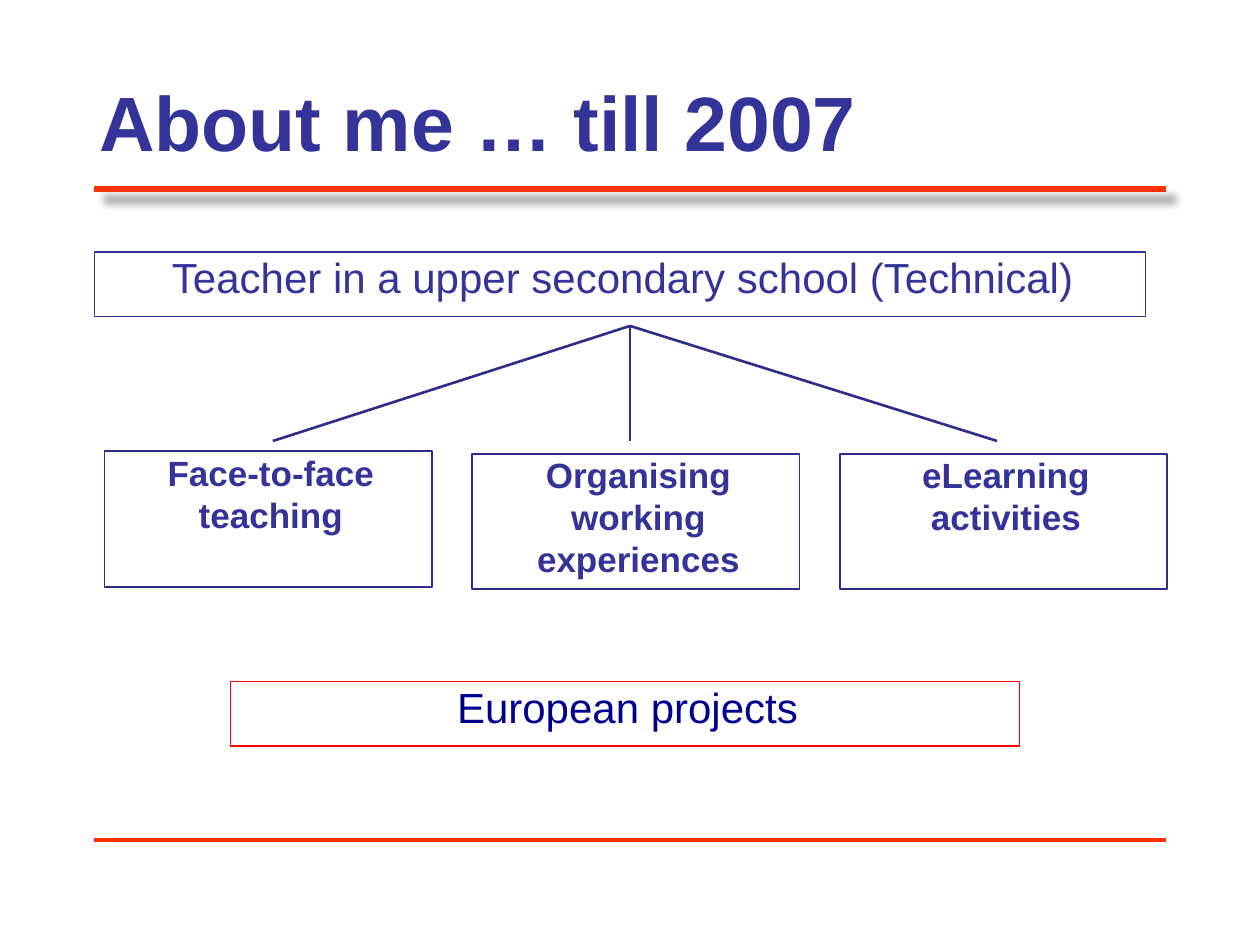
from lxml import etree
from pptx import Presentation
from pptx.dml.color import RGBColor
from pptx.enum.shapes import MSO_CONNECTOR, MSO_SHAPE
from pptx.enum.text import MSO_ANCHOR, PP_ALIGN
from pptx.oxml import parse_xml
from pptx.oxml.ns import nsdecls, qn
from pptx.util import Cm, Pt

STRAIGHT = MSO_CONNECTOR.STRAIGHT
RECTANGLE = MSO_SHAPE.RECTANGLE
TOP, MIDDLE = MSO_ANCHOR.TOP, MSO_ANCHOR.MIDDLE
LEFT, CENTER = PP_ALIGN.LEFT, PP_ALIGN.CENTER

INDIGO = RGBColor(0x33, 0x33, 0x99)
DARK_INDIGO = RGBColor(0x2D, 0x2D, 0x8A)
NAVY = RGBColor(0x00, 0x00, 0x90)
ORANGE = RGBColor(0xFF, 0x33, 0x00)
RED = RGBColor(0xFF, 0x00, 0x00)

RULE_SHADOW = (
    f'<a:effectLst {nsdecls("a")}>'
    '<a:outerShdw blurRad="63500" dist="101600" dir="2700000">'
    '<a:srgbClr val="808080"/></a:outerShdw></a:effectLst>'
)


class SlideBuilder:
    """Draws the elements of one slide in a shared style."""

    font_name = "Arial"

    def __init__(self, slide):
        self.slide = slide

    def set_text(self, shape, text, size, color, bold, alignment, anchor):
        frame = shape.text_frame
        frame.word_wrap = True
        frame.vertical_anchor = anchor
        frame.margin_left = Cm(0.1)
        frame.margin_right = frame.margin_top = frame.margin_bottom = 0
        paragraph = frame.paragraphs[0]
        paragraph.text = text
        paragraph.alignment = alignment
        font = paragraph.font
        font.name, font.size, font.bold = self.font_name, Pt(size), bold
        font.color.rgb = color

    def title(self, text, left, top, width, height):
        shape = self.slide.shapes.add_textbox(Cm(left), Cm(top), Cm(width), Cm(height))
        self.set_text(shape, text, 44, INDIGO, True, LEFT, MIDDLE)

    def box(self, text, left, top, width, height, border, border_width,
            size=24, color=INDIGO, bold=False):
        shape = self.slide.shapes.add_shape(
            RECTANGLE, Cm(left), Cm(top), Cm(width), Cm(height))
        shape.shadow.inherit = False
        shape.fill.background()
        shape.line.color.rgb = border
        shape.line.width = Pt(border_width)
        self.set_text(shape, text, size, color, bold, CENTER, TOP)

    def line(self, start, end, color, width, shadow=None):
        connector = self.slide.shapes.add_connector(
            STRAIGHT, *(Cm(value) for value in (*start, *end)))
        connector.line.color.rgb = color
        connector.line.width = Pt(width)
        properties = connector._element.spPr
        if shadow:
            properties.append(parse_xml(shadow))
        else:
            etree.SubElement(properties, qn("a:effectLst"))


def main():
    presentation = Presentation()
    presentation.slide_width, presentation.slide_height = Cm(25.4), Cm(19.05)
    slide = presentation.slides.add_slide(presentation.slide_layouts[6])
    builder = SlideBuilder(slide)

    margin, right = 1.9, 23.5
    builder.line((margin, 16.94), (right, 16.94), ORANGE, 2.25)
    builder.line((margin, 3.81), (right, 3.81), ORANGE, 3, RULE_SHADOW)
    builder.title("About me … till 2007", margin, 0.2, right - margin, 4.45)
    builder.box("Teacher in a upper secondary school (Technical)",
                margin, 5.08, 21.2, 1.3, INDIGO, 0.75)

    activities = (
        ("Face-to-face teaching", 9.1, 5.5),
        ("Organising working experiences", 9.15, 12.7),
        ("eLearning activities", 9.15, 20.1),
    )
    for column, (text, top, line_end) in enumerate(activities):
        builder.box(text, 2.11 + 7.41 * column, top, 6.6, 2.73,
                    DARK_INDIGO, 1, size=20, bold=True)
        builder.line((12.7, 6.57), (line_end, 8.89), DARK_INDIGO, 1.5)

    builder.box("European projects", 4.65, 13.74, 15.9, 1.3, RED, 0.75, color=NAVY)
    presentation.save("out.pptx")


if __name__ == "__main__":
    main()
